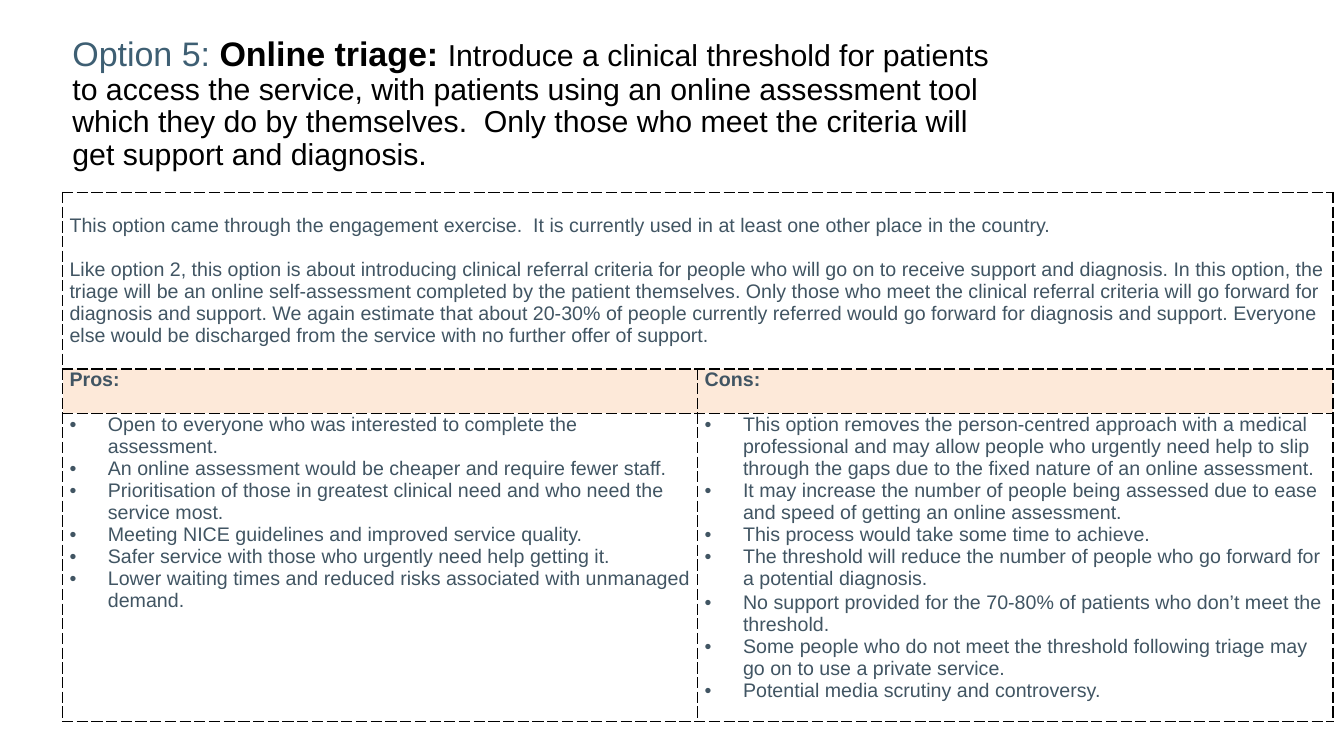
from lxml.etree import SubElement
from pptx import Presentation
from pptx.dml.color import RGBColor
from pptx.enum.text import MSO_ANCHOR
from pptx.oxml.ns import qn
from pptx.util import Inches, Pt

FONT = "Arial"
SLATE, BLUE, BLACK, PEACH, WHITE = "415563", "3E5F73", "000000", "FDE9D9", "FFFFFF"
LEFT, TABLE_TOP, COL = 0.62, 1.91, 6.3
ROWS = (1.75, 0.44, 2.86)
LINE = 0.22  # height of one line of table text, inches

TITLE = [
    ("Option 5: ", 24.3, BLUE, False),
    ("Online triage: ", 24.3, BLACK, True),
    ("Introduce a clinical threshold for patients to access the service, with "
     "patients using an online assessment tool which they do by themselves.  "
     "Only those who meet the criteria will get support and diagnosis.",
     21.6, BLACK, False),
]
SUMMARY = [
    "This option came through the engagement exercise.  It is currently used in "
    "at least one other place in the country.",
    "Like option 2, this option is about introducing clinical referral criteria for "
    "people who will go on to receive support and diagnosis. In this option, the "
    "triage will be an online self-assessment completed by the patient themselves. "
    "Only those who meet the clinical referral criteria will go forward for diagnosis "
    "and support. We again estimate that about 20-30% of people currently referred "
    "would go forward for diagnosis and support. Everyone else would be discharged "
    "from the service with no further offer of support.",
]
PROS = [
    "Open to everyone who was interested to complete the assessment.",
    "An online assessment would be cheaper and require fewer staff.",
    "Prioritisation of those in greatest clinical need and who need the service most.",
    "Meeting NICE guidelines and improved service quality.",
    "Safer service with those who urgently need help getting it.",
    "Lower waiting times and reduced risks associated with unmanaged demand.",
]
CONS = [
    "This option removes the person-centred approach with a medical professional and "
    "may allow people who urgently need help to slip through the gaps due to the "
    "fixed nature of an online assessment.",
    "It may increase the number of people being assessed due to ease and speed of "
    "getting an online assessment.",
    "This process would take some time to achieve.",
    "The threshold will reduce the number of people who go forward for a potential "
    "diagnosis.",
    "No support provided for the 70-80% of patients who don’t meet the threshold.",
    "Some people who do not meet the threshold following triage may go on to use a "
    "private service.",
    "Potential media scrutiny and controversy.",
]


def rgb(color):
    return RGBColor.from_string(color)


def style(run, size, color, bold=False):
    run.font.name, run.font.size, run.font.bold = FONT, Pt(size), bold
    run.font.color.rgb = rgb(color)


def add_title(slide):
    sp = slide.shapes.add_textbox(Inches(LEFT), Inches(0.36), Inches(9.44), Inches(1.36))
    tf = sp.text_frame
    tf.word_wrap = True
    tf.vertical_anchor = MSO_ANCHOR.MIDDLE
    tf.margin_top = tf.margin_bottom = 0
    p = tf.paragraphs[0]
    p.line_spacing = 0.9
    for text, size, color, bold in TITLE:
        r = p.add_run()
        r.text = text
        style(r, size, color, bold)


def dash_borders(cell):
    tc_pr = cell._tc.get_or_add_tcPr()
    for side in ("a:lnL", "a:lnR", "a:lnT", "a:lnB"):
        ln = SubElement(tc_pr, qn(side), w=str(Pt(1)))
        fill = SubElement(ln, qn("a:solidFill"))
        SubElement(fill, qn("a:srgbClr"), val=BLACK)
        SubElement(ln, qn("a:prstDash"), val="dash")


def add_bullet(p):
    p_pr = p._p.get_or_add_pPr()
    p_pr.set("marL", str(Inches(0.38)))
    p_pr.set("indent", str(-Inches(0.38)))
    SubElement(p_pr, qn("a:buFont"), typeface=FONT)
    SubElement(p_pr, qn("a:buChar"), char="•")


def fill_cell(cell, texts, fill=WHITE, bold=False, bullets=False):
    cell.fill.solid()
    cell.fill.fore_color.rgb = rgb(fill)
    tf = cell.text_frame
    tf.text = "\n".join(texts)
    for p in tf.paragraphs:
        if bullets:
            add_bullet(p)
        for r in p.runs:
            style(r, 14, SLATE, bold)


def add_options_table(slide):
    frame = slide.shapes.add_table(len(ROWS), 2, Inches(LEFT), Inches(TABLE_TOP),
                                   Inches(2 * COL), Inches(sum(ROWS)))
    table = frame.table
    table.first_row = table.horz_banding = False
    for column in table.columns:
        column.width = Inches(COL)
    for row, height in zip(table.rows, ROWS):
        row.height = Inches(height)
    for cell in table.iter_cells():
        cell.margin_left = cell.margin_right = Inches(0.07)
        cell.margin_top = cell.margin_bottom = 0
        dash_borders(cell)

    summary = table.cell(0, 0)
    summary.merge(table.cell(0, 1))
    fill_cell(summary, SUMMARY)
    summary.margin_top = Inches(LINE)
    summary.text_frame.paragraphs[1].space_before = Inches(LINE)

    for col, (heading, points) in enumerate((("Pros:", PROS), ("Cons:", CONS))):
        fill_cell(table.cell(1, col), [heading], PEACH, bold=True)
        fill_cell(table.cell(2, col), points, bullets=True)
    table.cell(2, 1).text_frame.paragraphs[3].space_after = Pt(1.4)


def main():
    prs = Presentation()
    prs.slide_width, prs.slide_height = Inches(13.33), Inches(7.5)
    slide = prs.slides.add_slide(prs.slide_layouts[6])
    add_title(slide)
    add_options_table(slide)
    prs.save("out.pptx")


if __name__ == "__main__":
    main()
